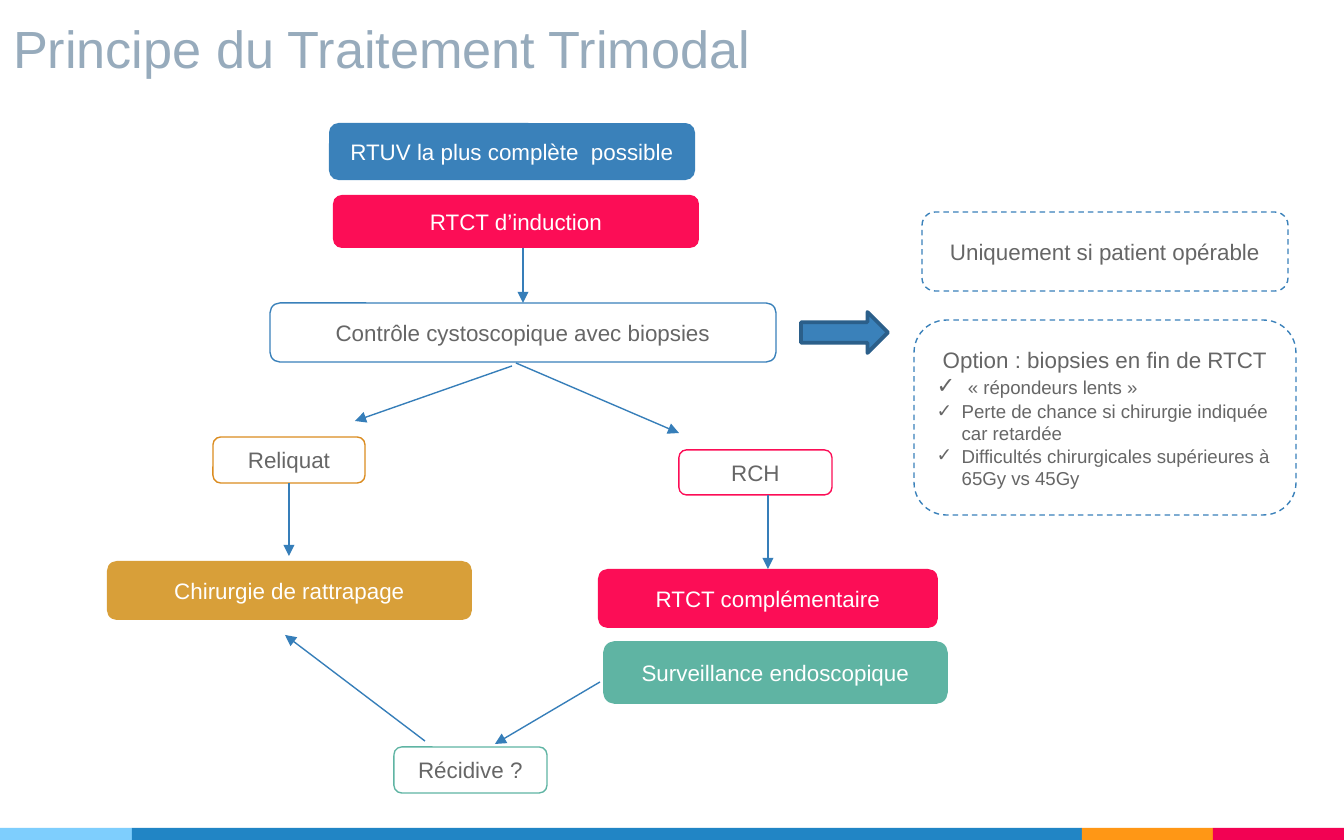
from dataclasses import dataclass
from typing import Optional

from lxml import etree
from pptx import Presentation
from pptx.dml.color import RGBColor
from pptx.enum.dml import MSO_LINE
from pptx.enum.shapes import MSO_CONNECTOR, MSO_SHAPE
from pptx.enum.text import MSO_ANCHOR, MSO_AUTO_SIZE, PP_ALIGN
from pptx.oxml.ns import qn
from pptx.util import Emu, Pt

RECTANGLE = MSO_SHAPE.RECTANGLE
ROUNDED = MSO_SHAPE.ROUNDED_RECTANGLE
RIGHT_ARROW = MSO_SHAPE.RIGHT_ARROW
STRAIGHT = MSO_CONNECTOR.STRAIGHT
DASH = MSO_LINE.DASH
LEFT, CENTER = PP_ALIGN.LEFT, PP_ALIGN.CENTER
MIDDLE, BOTTOM = MSO_ANCHOR.MIDDLE, MSO_ANCHOR.BOTTOM
NO_AUTO_SIZE = MSO_AUTO_SIZE.NONE
TOP_SIDE, BOTTOM_SIDE = 0, 2

WIDTH, HEIGHT = 1344, 840
EMU_PER_PX = 9144000 / WIDTH
FONT = "Arial"
BLUE, PINK, GOLD, GREEN = "3A81BA", "FC0D56", "D89F39", "5FB4A3"
WHITE, GREY = "FFFFFF", "666666"


@dataclass
class Box:
    key: str
    left: int
    top: int
    width: int
    height: int
    text: str = ""
    fill: Optional[str] = None
    line: Optional[str] = None
    line_width: float = 0.75
    dashed: bool = False
    kind: int = ROUNDED


@dataclass
class Arrow:
    start: tuple[int, int]
    end: tuple[int, int]
    start_box: Optional[str] = None  # joined at the middle of its bottom side
    end_box: Optional[str] = None  # joined at the middle of its top side


BOXES = [
    Box("rtuv", 329, 123, 366, 57, "RTUV la plus complète  possible", BLUE),
    Box("induction", 333, 195, 366, 53, "RTCT d’induction", PINK),
    Box("control", 270, 303, 506, 59, "Contrôle cystoscopique avec biopsies", line=BLUE),
    Box("completion", 598, 569, 340, 59, "RTCT complémentaire", PINK),
    Box("surgery", 107, 561, 365, 59, "Chirurgie de rattrapage", GOLD),
    Box("operable", 922, 212, 366, 79, "Uniquement si patient opérable", line=BLUE, dashed=True),
    Box("residue", 213, 437, 152, 46, "Reliquat", line="DB8C20"),
    Box("response", 679, 450, 153, 45, "RCH", line=PINK),
    Box("follow-up", 605, 643, 341, 59, "Surveillance endoscopique", GREEN, GREEN, 2),
    Box("relapse", 394, 747, 153, 46, "Récidive ?", line=GREEN),
    Box("option", 914, 320, 382, 195, "Option : biopsies en fin de RTCT", line=BLUE, dashed=True),
    Box("block arrow", 801, 312, 87, 41, "", BLUE, "2B5F8A", 2, kind=RIGHT_ARROW),
]

ARROWS = [
    Arrow((512, 366), (355, 421)),
    Arrow((516, 363), (679, 433)),
    Arrow((289, 483), (289, 556), start_box="residue"),
    Arrow((768, 495), (768, 569), end_box="completion"),
    Arrow((523, 248), (523, 303), end_box="control"),
    Arrow((600, 682), (495, 744)),
    Arrow((425, 741), (285, 635)),
]

OPTION_POINTS = [
    "« répondeurs lents »",
    "Perte de chance si chirurgie indiquée car retardée",
    "Difficultés chirurgicales supérieures à 65Gy vs 45Gy",
]

# Footer band: colour and right edge of each part
FOOTER_TOP = 828
FOOTER_PARTS = [("7ECEFD", 132), ("2185C5", 1082), ("FF9715", 1213), ("F20253", WIDTH)]


def px(value: int) -> Emu:
    return Emu(int(value * EMU_PER_PX))


def color(value: str) -> RGBColor:
    return RGBColor.from_string(value)


def set_font(font, size: float, value: str) -> None:
    font.name = FONT
    font.size = Pt(size)
    font.color.rgb = color(value)


def draw_box(slide, box: Box):
    shape = slide.shapes.add_shape(
        box.kind, px(box.left), px(box.top), px(box.width), px(box.height))
    shape.shadow.inherit = False
    if box.fill:
        shape.fill.solid()
        shape.fill.fore_color.rgb = color(box.fill)
    else:
        shape.fill.background()
    if box.line:
        shape.line.color.rgb = color(box.line)
        shape.line.width = Pt(box.line_width)
        if box.dashed:
            shape.line.dash_style = DASH
    else:
        shape.line.fill.background()
    if box.text:
        frame = shape.text_frame
        frame.word_wrap = True
        frame.vertical_anchor = MIDDLE
        paragraph = frame.paragraphs[0]
        paragraph.text = box.text
        paragraph.alignment = CENTER
        set_font(paragraph.font, 12, WHITE if box.fill else GREY)
    return shape


def draw_arrow(slide, arrow: Arrow, shapes: dict) -> None:
    connector = slide.shapes.add_connector(
        STRAIGHT, *map(px, arrow.start), *map(px, arrow.end))
    if arrow.start_box:
        connector.begin_connect(shapes[arrow.start_box], BOTTOM_SIDE)
    if arrow.end_box:
        connector.end_connect(shapes[arrow.end_box], TOP_SIDE)
    connector.line.color.rgb = color("367EB9")
    connector.line.width = Pt(0.75)
    etree.SubElement(connector.line._get_or_add_ln(), qn("a:tailEnd"), type="triangle")
    etree.SubElement(connector._element.spPr, qn("a:effectLst"))


def add_check_item(frame, text: str, lead: str = "") -> None:
    paragraph = frame.add_paragraph()
    paragraph.alignment = LEFT
    set_font(paragraph.font, 10, GREY)
    if lead:  # a larger first run also enlarges the check mark
        run = paragraph.add_run()
        run.text = lead
        run.font.size = Pt(12)
    paragraph.add_run().text = text
    properties = paragraph._p.get_or_add_pPr()
    properties.set("marL", str(px(25)))
    properties.set("indent", str(px(-25)))
    properties.insert(0, etree.Element(qn("a:buFont"), typeface=FONT))
    properties.insert(1, etree.Element(qn("a:buChar"), char="✓"))


def draw_title(slide) -> None:
    title = slide.shapes.title
    title.left, title.top, title.width, title.height = map(px, (0, 13, 1310, 79))
    frame = title.text_frame
    frame.auto_size = NO_AUTO_SIZE
    frame.word_wrap = True
    frame.vertical_anchor = BOTTOM
    frame.margin_left = frame.margin_right = px(13)
    frame.margin_top = frame.margin_bottom = px(13)
    paragraph = frame.paragraphs[0]
    paragraph.text = "Principe du Traitement Trimodal"
    paragraph.alignment = LEFT
    set_font(paragraph.font, 28, "97ABBC")


def main() -> None:
    presentation = Presentation()
    presentation.slide_width, presentation.slide_height = px(WIDTH), px(HEIGHT)
    slide = presentation.slides.add_slide(presentation.slide_layouts[5])

    # Title and footer band
    draw_title(slide)
    left = 0
    for fill, right in FOOTER_PARTS:
        draw_box(slide, Box("footer", left, FOOTER_TOP, right - left,
                            HEIGHT - FOOTER_TOP, fill=fill, kind=RECTANGLE))
        left = right

    # Flow chart
    shapes = {box.key: draw_box(slide, box) for box in BOXES}
    for arrow in ARROWS:
        draw_arrow(slide, arrow, shapes)

    # Check list of the option box
    for index, point in enumerate(OPTION_POINTS):
        add_check_item(shapes["option"].text_frame, point, "" if index else " ")

    presentation.save("out.pptx")


if __name__ == "__main__":
    main()
